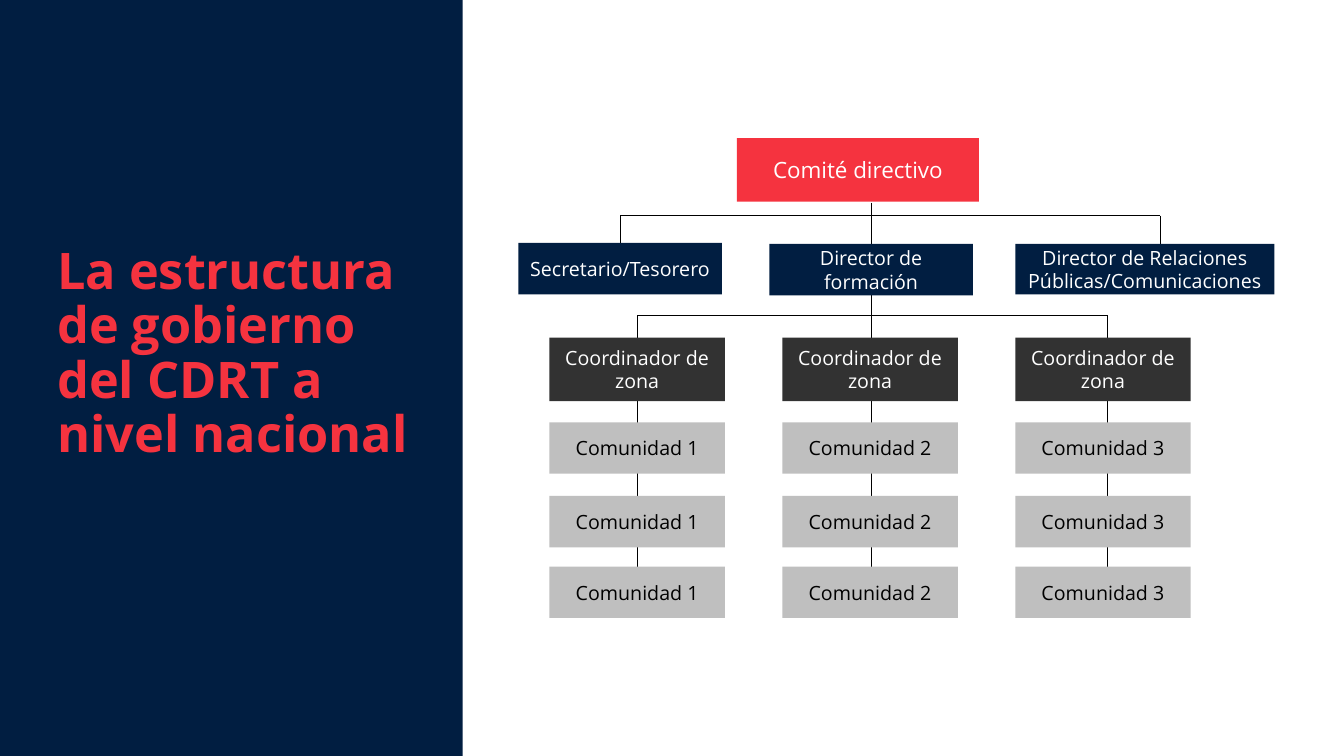
from lxml import etree
from pptx import Presentation
from pptx.dml.color import RGBColor
from pptx.enum.shapes import MSO_CONNECTOR, MSO_SHAPE
from pptx.enum.text import MSO_ANCHOR, PP_ALIGN
from pptx.oxml.ns import qn
from pptx.util import Inches, Pt

RECT = MSO_SHAPE.RECTANGLE
STRAIGHT = MSO_CONNECTOR.STRAIGHT
MIDDLE = MSO_ANCHOR.MIDDLE
LEFT, CENTER = PP_ALIGN.LEFT, PP_ALIGN.CENTER

NAVY = RGBColor(0x01, 0x1E, 0x41)
RED = RGBColor(0xF5, 0x33, 0x3F)
DARK = RGBColor(0x32, 0x32, 0x32)
GRAY = RGBColor(0xBF, 0xBF, 0xBF)
WHITE = RGBColor(0xFF, 0xFF, 0xFF)
BLACK = RGBColor(0, 0, 0)


def write(frame, text, size=14, color=WHITE, bold=False, align=CENTER, spacing=None):
    frame.word_wrap = True
    frame.vertical_anchor = MIDDLE
    para = frame.paragraphs[0]
    para.alignment = align
    if spacing:
        para.line_spacing = spacing
    run = para.add_run()
    run.text = text
    font = run.font
    font.name = "Open Sans"
    font.size = Pt(size)
    font.bold = bold
    font.color.rgb = color


class Chart:
    def __init__(self, slide):
        self.shapes = slide.shapes

    def box(self, left, top, width, height, fill, text=None, **style):
        shape = self.shapes.add_shape(
            RECT, Inches(left), Inches(top), Inches(width), Inches(height))
        shape.shadow.inherit = False
        shape.fill.solid()
        shape.fill.fore_color.rgb = fill
        shape.line.fill.background()
        if text:
            write(shape.text_frame, text, **style)

    def label(self, left, top, width, height, text, **style):
        area = self.shapes.add_textbox(
            Inches(left), Inches(top), Inches(width), Inches(height))
        write(area.text_frame, text, **style)

    def line(self, x1, y1, x2, y2):
        link = self.shapes.add_connector(
            STRAIGHT, Inches(x1), Inches(y1), Inches(x2), Inches(y2))
        link.line.color.rgb = BLACK
        link.line.width = Pt(0.75)
        etree.SubElement(link._element.spPr, qn("a:effectLst"))


def main():
    deck = Presentation()
    deck.slide_width, deck.slide_height = Inches(13.33), Inches(7.5)
    chart = Chart(deck.slides.add_slide(deck.slide_layouts[6]))

    chart.box(-0.02, -0.01, 4.61, 7.51, NAVY)
    chart.label(0.47, 1.06, 3.86, 4.92,
                "La estructura de gobierno del CDRT a nivel nacional",
                size=36, color=RED, bold=True, align=LEFT, spacing=0.9)

    chart.line(6.15, 2.14, 11.51, 2.14)
    for x in (6.15, 11.51):
        chart.line(x, 2.14, x, 2.58)
    chart.line(8.64, 2.01, 8.64, 3.13)
    chart.line(6.32, 3.13, 10.98, 3.13)
    for x, end in ((6.32, 6.01), (8.64, 6.13), (10.98, 6.01)):
        chart.line(x, 3.13, x, end)

    chart.box(7.31, 1.37, 2.4, 0.63, RED, "Comité directivo", size=16)
    for left, top, width, height, text in (
        (5.14, 2.41, 2.02, 0.51, "Secretario/Tesorero"),
        (7.63, 2.42, 2.02, 0.51, "Director de formación"),
        (10.07, 2.42, 2.57, 0.5, "Director de Relaciones Públicas/Comunicaciones"),
    ):
        chart.box(left, top, width, height, NAVY, text)

    for zone in range(3):
        left = 5.45 + 2.31 * zone
        chart.box(left, 3.35, 1.74, 0.63, DARK, "Coordinador de zona")
        for top in (4.19, 4.92, 5.62):
            chart.box(left, top, 1.74, 0.51, GRAY, f"Comunidad {zone + 1}", color=BLACK)

    deck.save("out.pptx")


if __name__ == "__main__":
    main()
